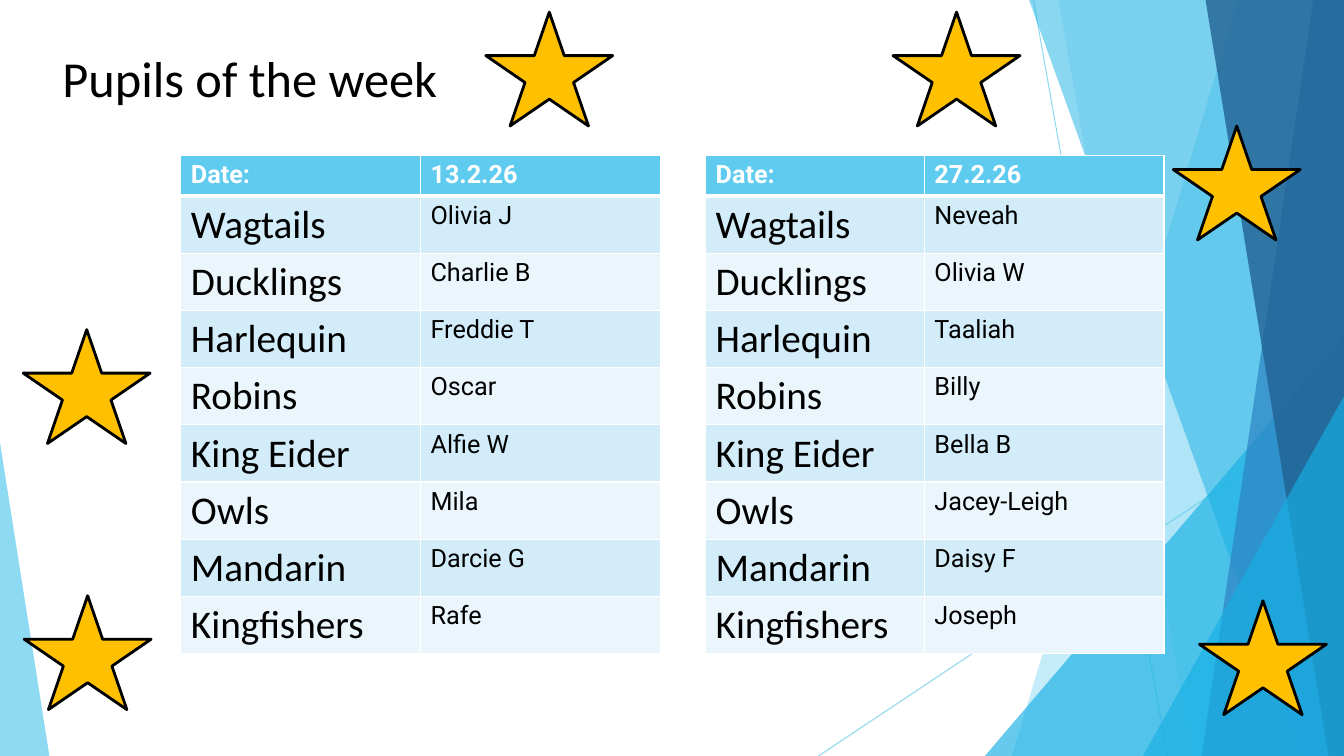
from lxml.etree import SubElement as Sub
from pptx import Presentation
from pptx.dml.color import RGBColor as RGB
from pptx.enum.shapes import MSO_CONNECTOR as Link, MSO_SHAPE as Kind
from pptx.enum.text import MSO_AUTO_SIZE as Fit
from pptx.oxml.ns import qn
from pptx.util import Inches, Pt

SKY, AQUA, BLUE, NAVY = "5FCBEF", "17B0E4", "2E83C3", "226292"
GOLD, BLACK, WHITE = "FFC000", "000000", "FFFFFF"
BANDS = "D2ECF9", "EAF6FC"


def paint(fill, hue, alpha=100):
    fill.solid()
    fill.fore_color.rgb = RGB.from_string(hue)
    if alpha < 100:
        tint = fill._xPr.find(".//" + qn("a:srgbClr"))
        Sub(tint, qn("a:alpha"), val=str(alpha * 1000))


def write(frame, text, size=18, face="Roboto", hue=BLACK, bold=False):
    par = frame.paragraphs[0]
    run = par.add_run()
    run.text = text
    font = run.font
    font.size, font.name, font.bold = Pt(size), face, bold
    paint(font.fill, hue)


def edge(cell, **sides):
    props = cell._tc.get_or_add_tcPr()
    for side, width in sides.items():
        line = Sub(props, qn("a:ln" + side), w=str(Pt(width)))
        fill = Sub(line, qn("a:solidFill"))
        Sub(fill, qn("a:srgbClr"), val=WHITE)


class Board:
    def __init__(self):
        self.deck = Presentation()
        self.deck.slide_width = Inches(13.333)
        self.deck.slide_height = Inches(7.5)
        self.slide = self.deck.slides.add_slide(self.deck.slide_layouts[6])
        self.shapes = self.slide.shapes

    def x(self, share):
        return round(self.deck.slide_width * share / 100)

    def y(self, share):
        return round(self.deck.slide_height * share / 100)

    def area(self, left, top, wide, high):
        return self.x(left), self.y(top), self.x(wide), self.y(high)

    def finish(self, shape, hue, alpha=100):
        shape.shadow.inherit = False
        paint(shape.fill, hue, alpha)
        shape.line.fill.background()

    def line(self, start, end):
        (left, top), (right, low) = start, end
        link = self.shapes.add_connector(
            Link.STRAIGHT, self.x(left), self.y(top), self.x(right), self.y(low))
        link.line.width = Pt(0.75)
        paint(link.line.fill, SKY, 70)
        Sub(link._element.spPr, qn("a:effectLst"))

    def shard(self, top, low, hue, alpha):
        pen = self.shapes.build_freeform(self.x(top), 0)
        ends = (100, 0), (100, 100), (low, 100)
        pen.add_line_segments([(self.x(a), self.y(b)) for a, b in ends])
        self.finish(pen.convert_to_shape(), hue, alpha)

    def wedge(self, left, top, wide, peak, hue, alpha):
        shape = self.shapes.add_shape(
            Kind.ISOSCELES_TRIANGLE, *self.area(left, top, wide, 100 - top))
        shape.adjustments[0] = peak
        self.finish(shape, hue, alpha)

    def star(self, left, top):
        shape = self.shapes.add_shape(
            Kind.STAR_5_POINT, *self.area(left, top, 9.45, 15.07))
        self.finish(shape, GOLD)
        paint(shape.line.fill, BLACK)
        shape.line.width = Pt(2)

    def title(self, text):
        box = self.shapes.add_textbox(*self.area(3.9, 5.6, 90, 9.47))
        box.text_frame.word_wrap = True
        box.text_frame.auto_size = Fit.SHAPE_TO_FIT_TEXT
        write(box.text_frame, text, size=36, face="Calibri")

    def table(self, left, widths, rows):
        head, step = 5.4, 7.56
        high = head + step * (len(rows) - 1)
        table = self.shapes.add_table(
            len(rows), len(widths),
            *self.area(left, 20.53, sum(widths), high)).table
        for col, width in zip(table.columns, widths):
            col.width = self.x(width)
        for r, row in enumerate(rows):
            table.rows[r].height = self.y(step if r else head)
            for c, text in enumerate(row):
                cell = table.cell(r, c)
                edge(cell, L=1, R=1, T=3 if r == 1 else 1, B=1 if r else 3)
                paint(cell.fill, BANDS[(r - 1) % 2] if r else SKY)
                if not r:
                    style = dict(hue=WHITE, bold=True)
                elif not c:
                    style = dict(size=28, face="Calibri")
                else:
                    style = {}
                write(cell.text_frame, text, **style)


LABELS = ("Date:", "Wagtails", "Ducklings", "Harlequin", "Robins",
          "King Eider", "Owls", "Mandarin", "Kingfishers")
FIRST = ("13.2.26", "Olivia J", "Charlie B", "Freddie T", "Oscar",
         "Alfie W", "Mila", "Darcie G", "Rafe")
SECOND = ("27.2.26", "Neveah", "Olivia W", "Taaliah", "Billy",
          "Bella B", "Jacey-Leigh", "Daisy F", "Joseph")
STARS = ((1.73, 43.6), (87.3, 16.67), (1.8, 78.8),
         (66.45, 1.6), (36.15, 1.6), (89.25, 79.47))


def main():
    board = Board()
    board.line((76.9, 0), (86.85, 100))
    board.line((100, 53.73), (60.9, 100))
    board.shard(92.1, 75.3, SKY, 36)
    board.shard(78.75, 88.72, SKY, 20)
    board.wedge(73.28, 44.4, 26.72, 1, AQUA, 66)
    board.shard(76.57, 96.82, AQUA, 50)
    board.shard(97.72, 89.4, BLUE, 70)
    board.shard(89.7, 98.85, NAVY, 80)
    board.wedge(85.05, 52.4, 14.95, 1, AQUA, 66)
    board.wedge(0, 58.53, 3.68, 0, SKY, 70)
    board.title("Pupils of the week")
    for spot in STARS:
        board.star(*spot)
    board.table(13.46, (17.83, 17.83), list(zip(LABELS, FIRST)))
    board.table(52.5, (16.28, 17.83), list(zip(LABELS, SECOND)))
    board.deck.save("out.pptx")


if __name__ == "__main__":
    main()
